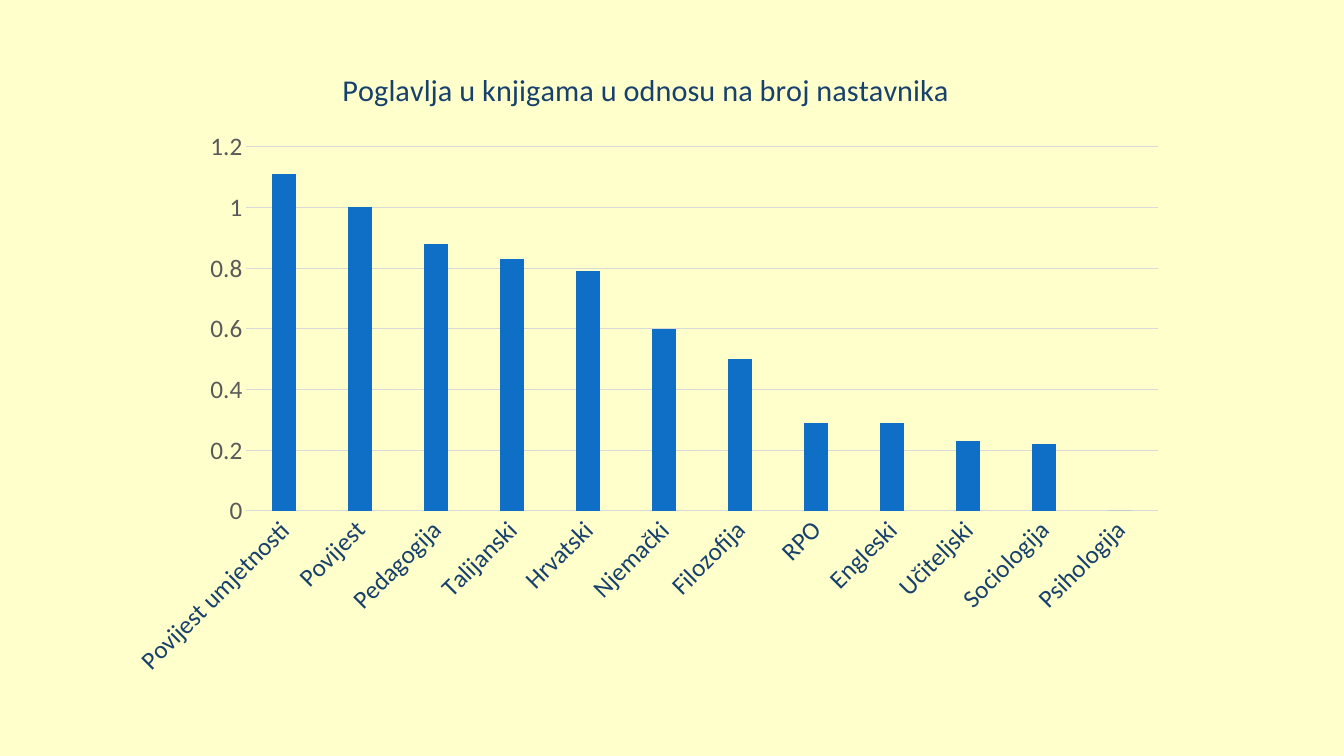
from dataclasses import dataclass

from pptx import Presentation
from pptx.chart.data import CategoryChartData
from pptx.dml.color import RGBColor
from pptx.enum.chart import XL_CHART_TYPE, XL_TICK_MARK
from pptx.util import Inches, Pt


@dataclass(frozen=True)
class Theme:
    font: str = "Calibri"
    background: RGBColor = RGBColor(0xFF, 0xFF, 0xCC)
    navy: RGBColor = RGBColor(0x17, 0x40, 0x6D)
    grey: RGBColor = RGBColor(0x59, 0x59, 0x59)
    rule: RGBColor = RGBColor(0xD9, 0xD9, 0xD9)
    column: RGBColor = RGBColor(0x0F, 0x6F, 0xC6)
    black: RGBColor = RGBColor(0, 0, 0)
    title_size: Pt = Pt(21.6)
    label_size: Pt = Pt(18)
    rule_width: Pt = Pt(0.75)


THEME = Theme()
TITLE = "Poglavlja u knjigama u odnosu na broj nastavnika"
CHAPTERS_PER_TEACHER = {
    "Povijest umjetnosti": 1.11,
    "Povijest": 1,
    "Pedagogija": 0.88,
    "Talijanski": 0.83,
    "Hrvatski": 0.79,
    "Njemački": 0.6,
    "Filozofija": 0.5,
    "RPO": 0.29,
    "Engleski": 0.29,
    "Učiteljski": 0.23,
    "Sociologija": 0.22,
    "Psihologija": 0,
}


def style_font(font, size, color):
    font.name = THEME.font
    font.size = size
    font.bold = False
    font.color.rgb = color


def style_rule(line):
    line.color.rgb = THEME.rule
    line.width = THEME.rule_width


def style_axis(axis, label_color):
    axis.major_tick_mark = XL_TICK_MARK.NONE
    axis.minor_tick_mark = XL_TICK_MARK.NONE
    style_font(axis.tick_labels.font, THEME.label_size, label_color)


def add_column_chart(slide, left, top, width, height):
    subjects = CategoryChartData()
    subjects.categories = list(CHAPTERS_PER_TEACHER)
    subjects.add_series("Series 1", list(CHAPTERS_PER_TEACHER.values()))
    chart = slide.shapes.add_chart(
        XL_CHART_TYPE.COLUMN_CLUSTERED, left, top, width, height, subjects
    ).chart
    style_font(chart.font, THEME.label_size, THEME.black)
    chart.has_legend = False
    return chart


def style_title(chart):
    chart.has_title = True
    heading = chart.chart_title.text_frame
    heading.text = TITLE
    style_font(heading.paragraphs[0].font, THEME.title_size, THEME.navy)
    chart.chart_title.include_in_layout = False


def style_axes(chart):
    style_axis(chart.category_axis, THEME.navy)
    style_rule(chart.category_axis.format.line)
    ratio_axis = chart.value_axis
    style_axis(ratio_axis, THEME.grey)
    ratio_axis.format.line.fill.background()
    ratio_axis.has_major_gridlines = True
    style_rule(ratio_axis.major_gridlines.format.line)


def style_columns(chart):
    columns = chart.plots[0]
    columns.gap_width = 219
    columns.overlap = -27
    columns.vary_by_categories = False
    fill = columns.series[0].format.fill
    fill.solid()
    fill.fore_color.rgb = THEME.column


def main():
    deck = Presentation()
    deck.slide_width, deck.slide_height = Inches(13.33), Inches(7.5)
    slide = deck.slides.add_slide(deck.slide_layouts[6])
    slide.background.fill.solid()
    slide.background.fill.fore_color.rgb = THEME.background
    chart = add_column_chart(
        slide, Inches(1.12), Inches(0.44), Inches(10.58), Inches(6.39)
    )
    style_title(chart)
    style_axes(chart)
    style_columns(chart)
    deck.save("out.pptx")


if __name__ == "__main__":
    main()
